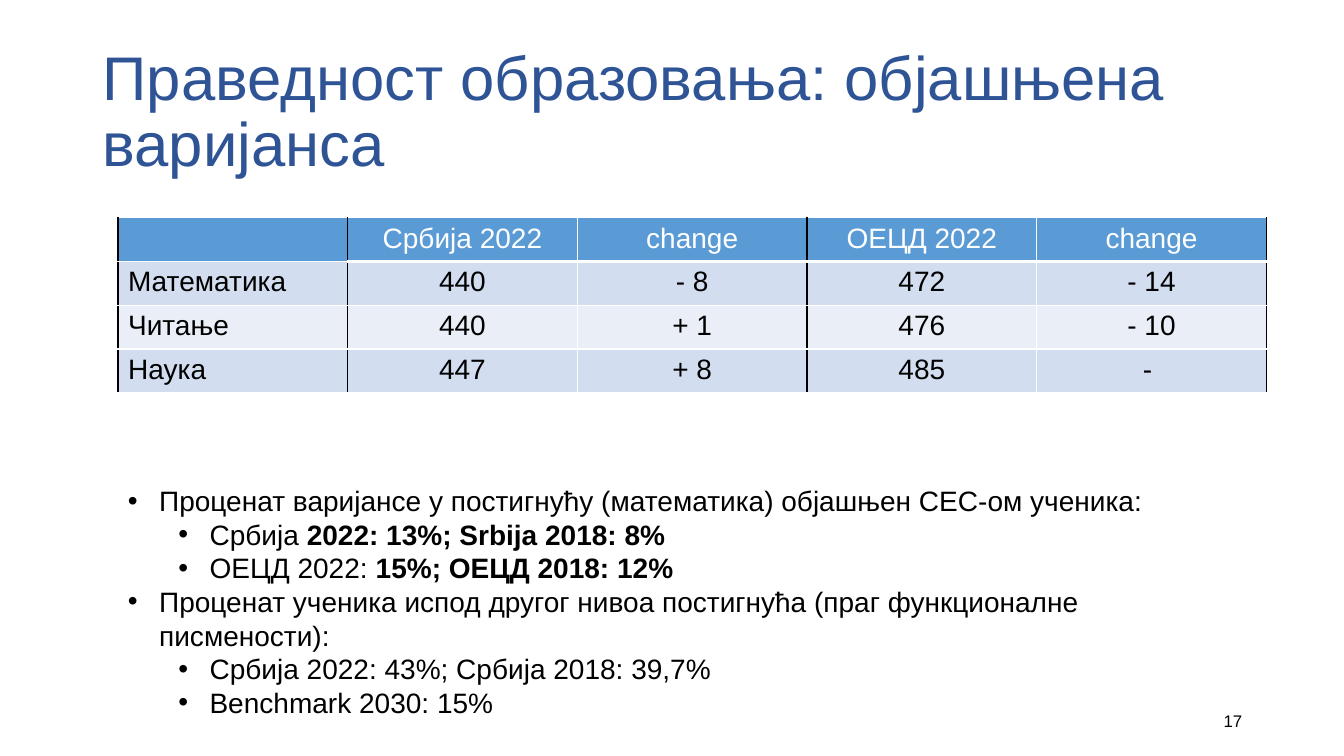
from dataclasses import dataclass

from lxml.etree import SubElement
from pptx import Presentation
from pptx.dml.color import RGBColor
from pptx.enum.text import MSO_ANCHOR, PP_ALIGN
from pptx.oxml.ns import qn
from pptx.util import Inches, Pt

COLORS = {"title": "2F5496", "head": "5B9BD5", "odd": "D2DEEF",
          "even": "EAEFF7", "white": "FFFFFF", "black": "000000"}
FONT = "Arial"


@dataclass
class Point:
    plain: str
    bold: str = ""
    level: int = 0


ROWS = [
    ["", "Србија 2022", "change", "ОЕЦД 2022", "change"],
    ["Математика", "440", "- 8", "472", "- 14"],
    ["Читање", "440", "+ 1", "476", "- 10"],
    ["Наука", "447", "+ 8", "485", "- "],
]
POINTS = [
    Point("Проценат варијансе у постигнућу (математика) објашњен СЕС-oм ученика:"),
    Point("Србија ", "2022: 13%; Srbija 2018: 8%", 1),
    Point("ОЕЦД 2022: ", "15%; ОЕЦД 2018: 12%", 1),
    Point("Проценат ученика испод другог нивоа постигнућа "
          "(праг функционалне писмености):"),
    Point("Србија 2022: 43%; Србија 2018: 39,7%", level=1),
    Point("Benchmark 2030: 15%", level=1),
]


def write(para, text: str, *, size: float = 20, color: str = "black",
          bold: bool = False, align=PP_ALIGN.LEFT) -> None:
    """Add a formatted run to a paragraph."""
    para.alignment = align
    run = para.add_run()
    run.text = text
    font = run.font
    font.name, font.size, font.bold = FONT, Pt(size), bold
    font.color.rgb = RGBColor.from_string(COLORS[color])


def add_box(slide, left: float, top: float, width: float, height: float,
            anchor=MSO_ANCHOR.MIDDLE):
    """Add a wrapping text box and return its frame."""
    frame = slide.shapes.add_textbox(
        Inches(left), Inches(top), Inches(width), Inches(height)).text_frame
    frame.word_wrap = True
    frame.vertical_anchor = anchor
    return frame


def add_edge(cell, side: str, color: str, width: float = 1) -> None:
    """Draw one border of a cell; sides go in the order L, R, T, B."""
    props = cell._tc.get_or_add_tcPr()
    line = SubElement(props, qn(f"a:ln{side}"), w=str(Pt(width)))
    fill = SubElement(line, qn("a:solidFill"))
    SubElement(fill, qn("a:srgbClr"), val=COLORS[color])


def fill_cell(cell, text: str, row: int, col: int) -> None:
    """Style one table cell; black rules part the column groups."""
    add_edge(cell, "L", "white" if col in (2, 4) else "black")
    add_edge(cell, "R", "white" if col in (1, 3) else "black")
    if col:
        add_edge(cell, "T", "white")
        add_edge(cell, "B", "white", 1 if row else 3)
    cell.fill.solid()
    tint = "head" if row == 0 else "odd" if row % 2 else "even"
    cell.fill.fore_color.rgb = RGBColor.from_string(COLORS[tint])
    if text:
        write(cell.text_frame.paragraphs[0], text,
              color="black" if row else "white",
              align=PP_ALIGN.CENTER if col else PP_ALIGN.LEFT)


def add_grid(slide) -> None:
    """Add the score table."""
    grid = slide.shapes.add_table(
        len(ROWS), len(ROWS[0]), Inches(1.17), Inches(2.16),
        Inches(11.39), Inches(1.64)).table
    for row, texts in enumerate(ROWS):
        for col, text in enumerate(texts):
            fill_cell(grid.cell(row, col), text, row, col)


def add_points(slide) -> None:
    """Add the bullet list in two levels."""
    frame = add_box(slide, 1.17, 4.75, 11.39, 2.46, MSO_ANCHOR.TOP)
    for num, point in enumerate(POINTS):
        para = frame.add_paragraph() if num else frame.paragraphs[0]
        para.level = point.level
        props = para._p.get_or_add_pPr()
        props.set("marL", str(Inches(0.31 + 0.5 * point.level)))
        props.set("indent", str(Inches(-0.31)))
        tint = SubElement(props, qn("a:buClr"))
        SubElement(tint, qn("a:srgbClr"), val=COLORS["black"])
        SubElement(props, qn("a:buFont"), typeface=FONT)
        SubElement(props, qn("a:buChar"), char="•")
        write(para, point.plain)
        if point.bold:
            write(para, point.bold, bold=True)


def main() -> None:
    deck = Presentation()
    deck.slide_width, deck.slide_height = Inches(13.33), Inches(7.5)
    slide = deck.slides.add_slide(deck.slide_layouts[6])

    # Title
    para = add_box(slide, 0.92, 0.4, 11.5, 1.45).paragraphs[0]
    para.line_spacing = 0.9
    write(para, "Праведност образовања: објашњена варијанса",
          size=44, color="title")

    # Table
    add_grid(slide)

    # Page number
    para = add_box(slide, 9.42, 6.95, 3, 0.4).paragraphs[0]
    write(para, "17", size=12, align=PP_ALIGN.RIGHT)

    # Bullets
    add_points(slide)
    deck.save("out.pptx")


if __name__ == "__main__":
    main()
